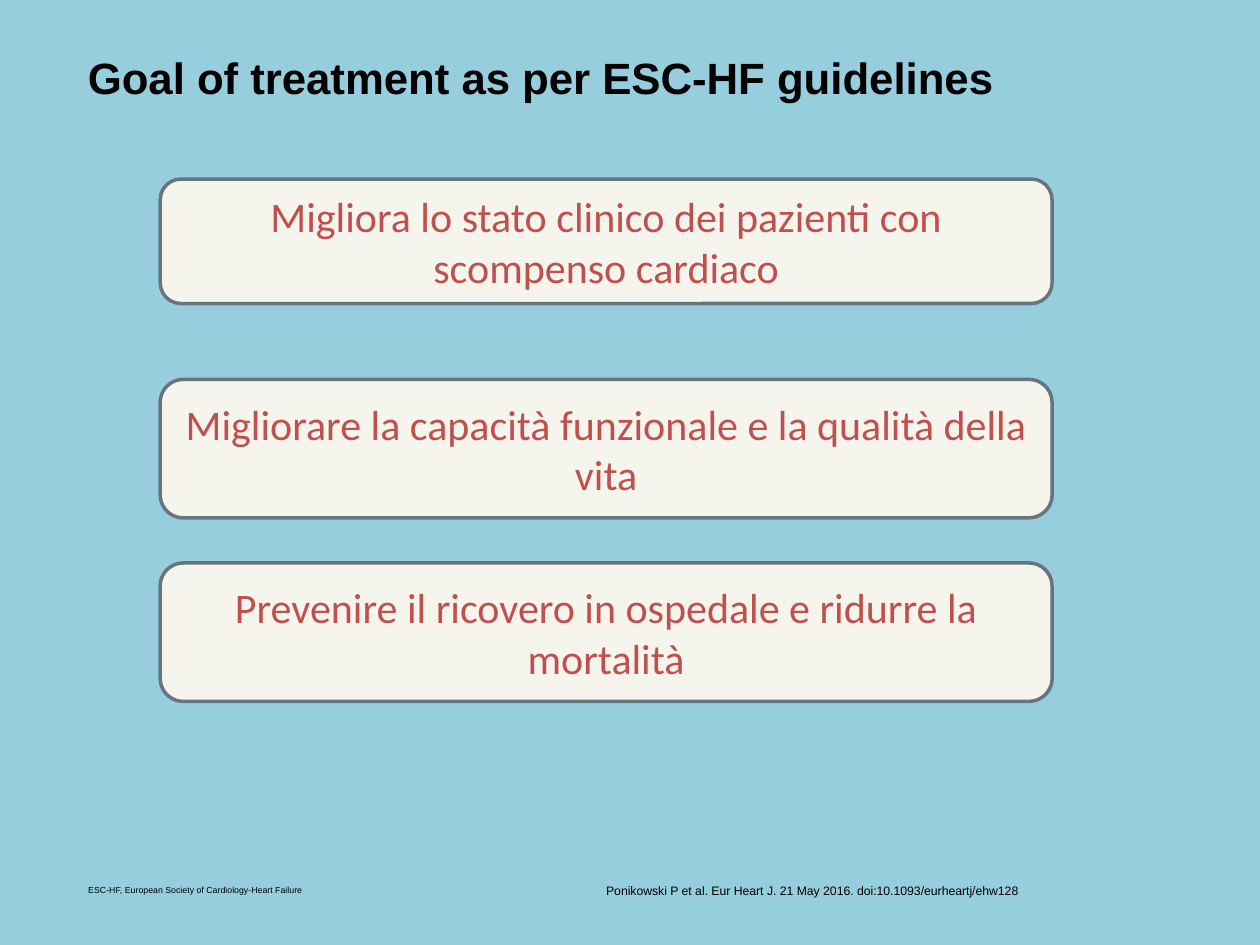
from pptx import Presentation
from pptx.dml.color import RGBColor
from pptx.enum.shapes import MSO_SHAPE
from pptx.enum.text import MSO_ANCHOR, PP_ALIGN
from pptx.util import Cm, Pt

ROUND = MSO_SHAPE.ROUNDED_RECTANGLE
MID, TOP = MSO_ANCHOR.MIDDLE, MSO_ANCHOR.TOP
MID_X, LEFT = PP_ALIGN.CENTER, PP_ALIGN.LEFT

HUES = {
    "sky": "96CEDE",
    "cream": "F5F4ED",
    "slate": "667580",
    "red": "C0504D",
    "black": "000000",
}

# Font formats
HEAD = {"name": "Arial", "size": Pt(25), "bold": True}
GOAL = {"name": "Calibri", "size": Pt(24), "bold": False}
CITE = {"name": "Arial", "size": Pt(7)}
NOTE = {"name": "Arial", "size": Pt(5)}

# Goals: top and height in cm, wording
GOALS = [
    (3.61, 2.51, "Migliora lo stato clinico dei pazienti con scompenso cardiaco"),
    (7.65, 2.79, "Migliorare la capacità funzionale e la qualità della vita"),
    (11.35, 2.79, "Prevenire il ricovero in ospedale e ridurre la mortalità"),
]


def tint(name):
    return RGBColor.from_string(HUES[name])


def write(shape, text, font, hue, pad=(0, 0), anchor=TOP, align=LEFT):
    """Put one formatted paragraph in a shape; pad is side and top in cm."""
    frame = shape.text_frame
    side, top = map(Cm, pad)
    form = {
        "word_wrap": True, "vertical_anchor": anchor,
        "margin_left": side, "margin_right": side,
        "margin_top": top, "margin_bottom": top,
    }
    for key, value in form.items():
        setattr(frame, key, value)
    para = frame.paragraphs[0]
    para.alignment = align
    run = para.add_run()
    run.text = text
    for key, value in font.items():
        setattr(run.font, key, value)
    run.font.color.rgb = tint(hue)


def add_title(slide, text):
    title = slide.shapes.title
    place = {"left": 1.52, "top": 0.64, "width": 22.53, "height": 1.83}
    for key, value in place.items():
        setattr(title, key, Cm(value))
    write(title, text, HEAD, "black", (0.25, 0.18), MID)


def add_goal(slide, top, height, text):
    box = slide.shapes.add_shape(ROUND, Cm(3.23), Cm(top), Cm(17.98), Cm(height))
    box.shadow.inherit = False
    box.fill.solid()
    box.fill.fore_color.rgb = tint("cream")
    box.line.color.rgb = tint("slate")
    box.line.width = Pt(2)
    write(box, text, GOAL, "red", (0.18, 0.1), MID, MID_X)


def add_foot(slide, spot, text, font):
    box = slide.shapes.add_textbox(*map(Cm, spot))
    write(box, text, font, "black")


def main():
    deck = Presentation()
    deck.slide_width, deck.slide_height = Cm(25.4), Cm(19.05)
    slide = deck.slides.add_slide(deck.slide_layouts[5])

    # Background
    back = slide.background.fill
    back.solid()
    back.fore_color.rgb = tint("sky")

    # Title and goals
    add_title(slide, "Goal of treatment as per ESC-HF guidelines")
    for goal in GOALS:
        add_goal(slide, *goal)

    # Source and abbreviation
    add_foot(slide, (12.22, 17.81, 8.41, 0.64),
             "Ponikowski P et al. Eur Heart J. 21 May 2016. "
             "doi:10.1093/eurheartj/ehw128", CITE)
    add_foot(slide, (1.78, 17.83, 8.43, 0.58),
             "ESC-HF, European Society of Cardiology-Heart Failure", NOTE)

    deck.save("out.pptx")


if __name__ == "__main__":
    main()
